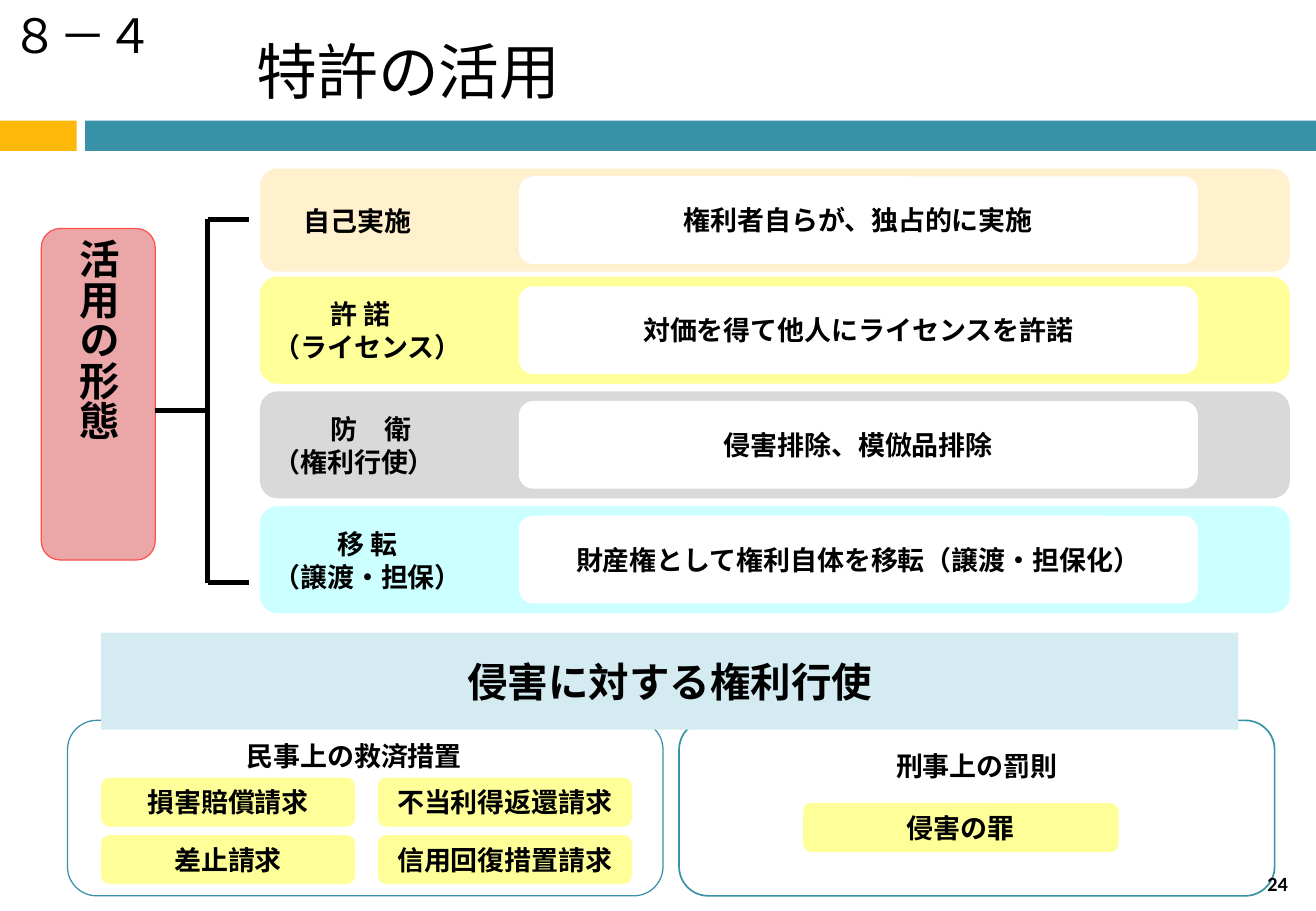
from lxml import etree
from pptx import Presentation
from pptx.dml.color import RGBColor
from pptx.enum.shapes import MSO_CONNECTOR, MSO_SHAPE
from pptx.enum.text import MSO_ANCHOR, PP_ALIGN
from pptx.oxml.ns import qn
from pptx.util import Pt

RECT, ROUND = MSO_SHAPE.RECTANGLE, MSO_SHAPE.ROUNDED_RECTANGLE
STRAIGHT = MSO_CONNECTOR.STRAIGHT
LEFT, CENTER = PP_ALIGN.LEFT, PP_ALIGN.CENTER
TOP, MIDDLE = MSO_ANCHOR.TOP, MSO_ANCHOR.MIDDLE

GOTHIC, SERIF = "Noto Sans CJK JP", "Times New Roman"
TEAL, YELLOW, BLACK, WHITE = "3891A7", "FFFF99", "000000", "FFFFFF"


def rgb(value):
    return RGBColor.from_string(value)


def write(tf, text, size=16, font=GOTHIC, bold=True, align=CENTER, anchor=MIDDLE,
          insets=(5, 3, 5, 3), indents=(), spacing=None, wrap=False):
    """Fill a text frame, one paragraph per line; indents go line by line."""
    tf.word_wrap = wrap
    tf.vertical_anchor = anchor
    tf.margin_left, tf.margin_top, tf.margin_right, tf.margin_bottom = map(Pt, insets)
    for i, line in enumerate(text.split("\n")):
        p = tf.paragraphs[0] if i == 0 else tf.add_paragraph()
        p.alignment = align
        if spacing:
            p.line_spacing = Pt(spacing)
        if i < len(indents):
            p._p.get_or_add_pPr().set("marL", str(Pt(indents[i])))
        r = p.add_run()
        r.text = line
        r.font.name, r.font.size, r.font.bold = font, Pt(size), bold
        r.font.color.rgb = rgb(BLACK)
        ea = etree.SubElement(r._r.get_or_add_rPr(), qn("a:ea"))
        ea.set("typeface", GOTHIC)


class SlideBuilder:
    def __init__(self, prs):
        self.s = prs.slides.add_slide(prs.slide_layouts[5])

    def title(self, text, x, y, w, h, **fmt):
        sp = self.s.shapes.title
        sp.left, sp.top, sp.width, sp.height = map(Pt, (x, y, w, h))
        write(sp.text_frame, text, **fmt)

    def text(self, text, x, y, w, h, **fmt):
        sp = self.s.shapes.add_textbox(*map(Pt, (x, y, w, h)))
        write(sp.text_frame, text, **fmt)

    def box(self, x, y, w, h, fill=None, line=None, width=0.75, shape=ROUND,
            text=None, **fmt):
        sp = self.s.shapes.add_shape(shape, *map(Pt, (x, y, w, h)))
        sp.shadow.inherit = False
        if fill:
            sp.fill.solid()
            sp.fill.fore_color.rgb = rgb(fill)
        else:
            sp.fill.background()
        if line:
            sp.line.color.rgb = rgb(line)
            sp.line.width = Pt(width)
        else:
            sp.line.fill.background()
        if text:
            write(sp.text_frame, text, **fmt)
        return sp

    def line(self, x1, y1, x2, y2, color=BLACK, width=3):
        c = self.s.shapes.add_connector(STRAIGHT, *map(Pt, (x1, y1, x2, y2)))
        c.line.color.rgb = rgb(color)
        c.line.width = Pt(width)
        etree.SubElement(c._element.spPr, qn("a:effectLst"))


def add_header(b):
    b.box(0, 71.5, 45.5, 18, "FEB80A", shape=RECT)
    b.box(50.5, 71.5, 729.5, 18, TEAL, shape=RECT)
    b.text("８－４", 0, 0, 141, 41, size=28, font="Arial", bold=False, align=LEFT,
           anchor=TOP, insets=(7.2, 3.6, 7.2, 3.6), wrap=True)
    b.title("特許の活用", 145, 16, 197, 51, size=36, font="Calibri", bold=False,
            align=LEFT, insets=(7.2, 3.6, 7.2, 3.6))


def add_usage_forms(b):
    rows = [
        (100, 61, "FFF1CE", "自己実施", 18, "権利者自らが、独占的に実施"),
        (164, 63.5, YELLOW, "許\u2002諾\n（ライセンス）".replace("\u2002", " "), 34,
         "対価を得て他人にライセンスを許諾"),
        (232, 63.5, "D9D9D9", "防　衛\n（権利行使）", 34, "侵害排除、模倣品排除"),
        (300, 63.5, "CCFFFF", "移 転\n（譲渡・担保）", 38,
         "財産権として権利自体を移転（譲渡・担保化）"),
    ]
    detail_h = 52
    for top, h, fill, label, indent, detail in rows:
        b.box(154, top, 610.5, h, fill, text=label, align=LEFT,
              indents=(indent,), spacing=19.5)
        b.box(307.5, top + (h - detail_h) / 2, 402.5, detail_h, WHITE, text=detail)

    tag = b.box(24.5, 135.5, 67.5, 196.5, "EBA7A8", "FF5050",
                text="活用の形態", size=24)
    tag.text_frame._txBody.bodyPr.set("vert", "eaVert")

    spine, first, last = 123, 130, 345.5
    b.line(92, 243.5, spine, 243.5)
    b.line(spine, first, spine, last)
    for y in (first, last):
        b.line(spine, y, 147.5, y)


def add_enforcement(b):
    b.box(40, 427, 353, 104, line=TEAL, text="民事上の救済措置", font=SERIF,
          anchor=TOP, insets=(0, 6, 13, 0))
    b.box(402.5, 427, 353, 104, line=TEAL, width=1, text="刑事上の罰則", font=SERIF,
          anchor=TOP, insets=(0, 12, 0, 0))
    claims = ["損害賠償請求", "不当利得返還請求", "差止請求", "信用回復措置請求"]
    for i, claim in enumerate(claims):
        b.box(60 + i % 2 * 164, 461 + i // 2 * 34, 150.5, 29, YELLOW,
              text=claim, font=SERIF)
    b.box(476, 476, 187, 29, YELLOW, text="侵害の罪", font=SERIF)
    b.box(60, 375, 674, 57.5, "D4EBF1", shape=RECT, text="侵害に対する権利行使", size=24)


def main():
    prs = Presentation()
    prs.slide_width, prs.slide_height = Pt(780), Pt(540)
    b = SlideBuilder(prs)
    add_header(b)
    add_usage_forms(b)
    add_enforcement(b)
    b.text("24", 734.5, 514, 45.5, 19.5, size=12, font="Calibri", wrap=True)
    prs.save("out.pptx")


if __name__ == "__main__":
    main()
